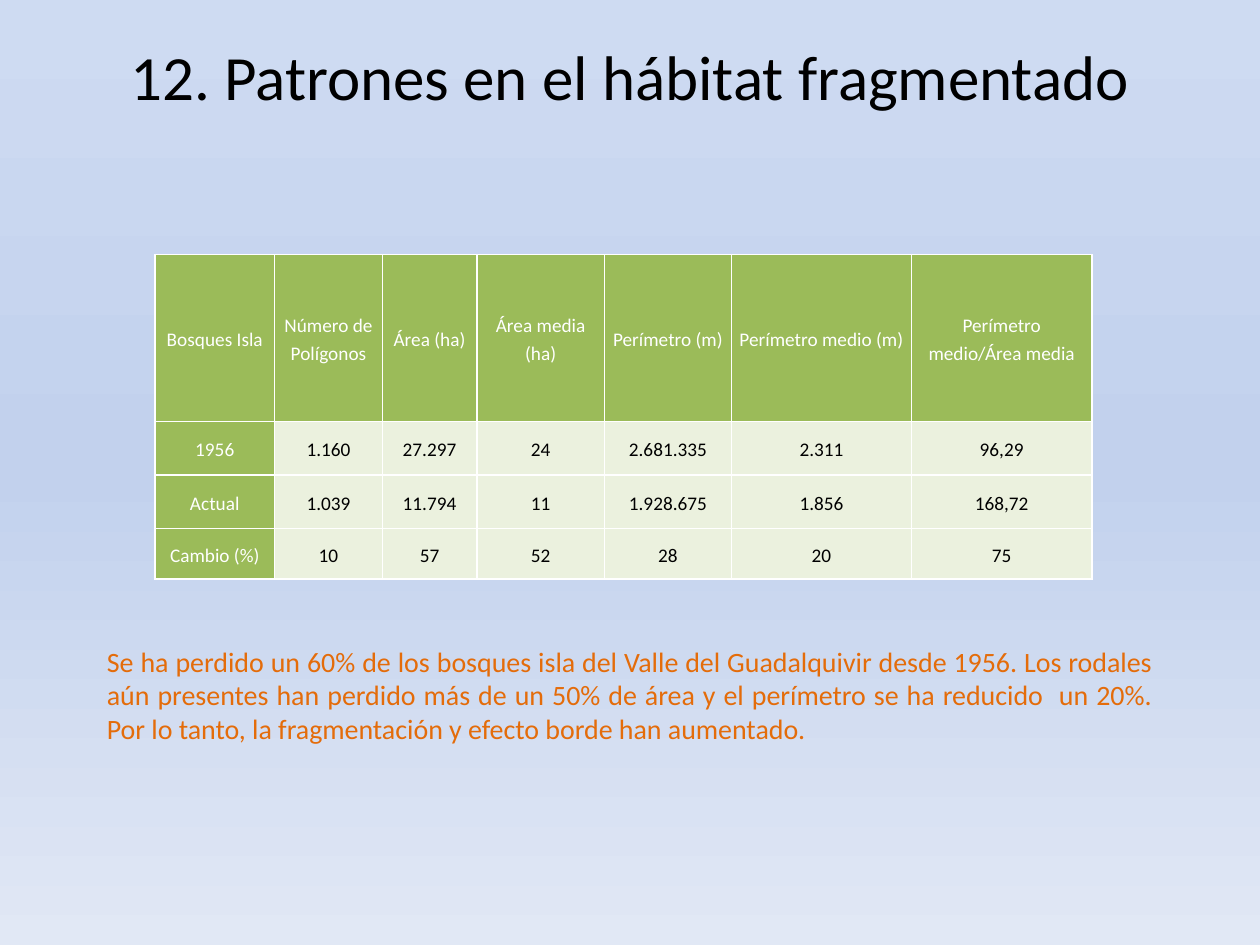
from copy import deepcopy
from dataclasses import dataclass

from lxml import etree
from pptx import Presentation
from pptx.dml.color import RGBColor
from pptx.enum.text import MSO_ANCHOR, MSO_AUTO_SIZE, PP_ALIGN
from pptx.oxml.ns import qn
from pptx.util import Pt

CENTER, JUSTIFY = PP_ALIGN.CENTER, PP_ALIGN.JUSTIFY
MIDDLE, TOP = MSO_ANCHOR.MIDDLE, MSO_ANCHOR.TOP
GROW, FIXED = MSO_AUTO_SIZE.SHAPE_TO_FIT_TEXT, MSO_AUTO_SIZE.NONE


@dataclass(frozen=True)
class Theme:
    font: str = "Calibri"
    sky: tuple = ((0, "CEDBF2"), (0.5, "C2D1ED"), (1, "E1E8F5"))
    ink: str = "000000"
    white: str = "FFFFFF"
    accent: str = "E46C0A"
    head: str = "9BBB59"
    body: str = "EBF1DE"
    title: int = 36
    note: int = 16
    cell: int = 11
    rule: int = 1


THEME = Theme()
TITLE = "12. Patrones en el hábitat fragmentado"
NOTE = (
    "Se ha perdido un 60% de los bosques isla del Valle del Guadalquivir "
    "desde 1956. Los rodales aún presentes han perdido más de un 50% de área "
    "y el perímetro se ha reducido  un 20%. Por lo tanto, la fragmentación "
    "y efecto borde han aumentado."
)
DATA = (
    ("Bosques Isla", "Número de Polígonos", "Área (ha)", "Área media (ha)",
     "Perímetro (m)", "Perímetro medio (m)", "Perímetro medio/Área media"),
    ("1956", "1.160", "27.297", "24", "2.681.335", "2.311", "96,29"),
    ("Actual", "1.039", "11.794", "11", "1.928.675", "1.856", "168,72"),
    ("Cambio (%)", "10", "57", "52", "28", "20", "75"),
)
COLS = (68.5, 61.5, 54, 73, 72.5, 103, 103)
ROWS = (95.5, 30.5, 30.5, 29)


def apply(item, values):
    for name, value in values.items():
        setattr(item, name, value)


def write(frame, text, size, color, align, lead=1.0):
    para = frame.paragraphs[0]
    apply(para, {"alignment": align, "line_spacing": lead})
    run = para.add_run()
    run.text = text
    apply(run.font, {"name": THEME.font, "size": Pt(size)})
    run.font.color.rgb = RGBColor.from_string(color)


def add_sky(slide):
    fill = slide.background.fill
    fill.gradient()
    fill.gradient_angle = 270
    stops = slide.element.find(".//" + qn("a:gsLst"))
    stops.append(deepcopy(stops[-1]))
    for stop, (place, color) in zip(fill.gradient_stops, THEME.sky):
        stop.color.rgb = RGBColor.from_string(color)
        stop.position = place


def add_text(slide, box, text, size, color, align, anchor, fit):
    frame = slide.shapes.add_textbox(*map(Pt, box)).text_frame
    apply(frame, {"word_wrap": True, "vertical_anchor": anchor, "auto_size": fit})
    write(frame, text, size, color, align)


def add_rules(cell):
    props = cell._tc.get_or_add_tcPr()
    for side in ("L", "R", "T", "B"):
        line = etree.SubElement(props, qn("a:ln" + side), w=str(Pt(THEME.rule)))
        fill = etree.SubElement(line, qn("a:solidFill"))
        etree.SubElement(fill, qn("a:srgbClr"), val=THEME.white)


def add_grid(slide, left, top):
    box = map(Pt, (left, top, sum(COLS), sum(ROWS)))
    table = slide.shapes.add_table(len(ROWS), len(COLS), *box).table
    apply(table, {"first_row": False, "horz_banding": False})
    for col, width in zip(table.columns, COLS):
        col.width = Pt(width)
    for row, height in zip(table.rows, ROWS):
        row.height = Pt(height)
    form = {
        "vertical_anchor": MIDDLE,
        "margin_left": Pt(3.6),
        "margin_right": Pt(3.6),
        "margin_top": 0,
        "margin_bottom": 0,
    }
    for r, words in enumerate(DATA):
        for c, word in enumerate(words):
            cell = table.cell(r, c)
            head = r == 0 or c == 0
            apply(cell, form)
            add_rules(cell)
            cell.fill.solid()
            shade = THEME.head if head else THEME.body
            cell.fill.fore_color.rgb = RGBColor.from_string(shade)
            color = THEME.white if head else THEME.ink
            write(cell.text_frame, word, THEME.cell, color, CENTER, 1.15)


def main():
    deck = Presentation()
    apply(deck, {"slide_width": Pt(720), "slide_height": Pt(540)})
    slide = deck.slides.add_slide(deck.slide_layouts[6])
    add_sky(slide)
    add_text(slide, (54, 364.5, 612, 65.5), NOTE, THEME.note, THEME.accent,
             JUSTIFY, TOP, GROW)
    add_grid(slide, 88.5, 145.5)
    add_text(slide, (14, 9.5, 692, 67.5), TITLE, THEME.title, THEME.ink,
             CENTER, MIDDLE, FIXED)
    deck.save("out.pptx")


if __name__ == "__main__":
    main()
